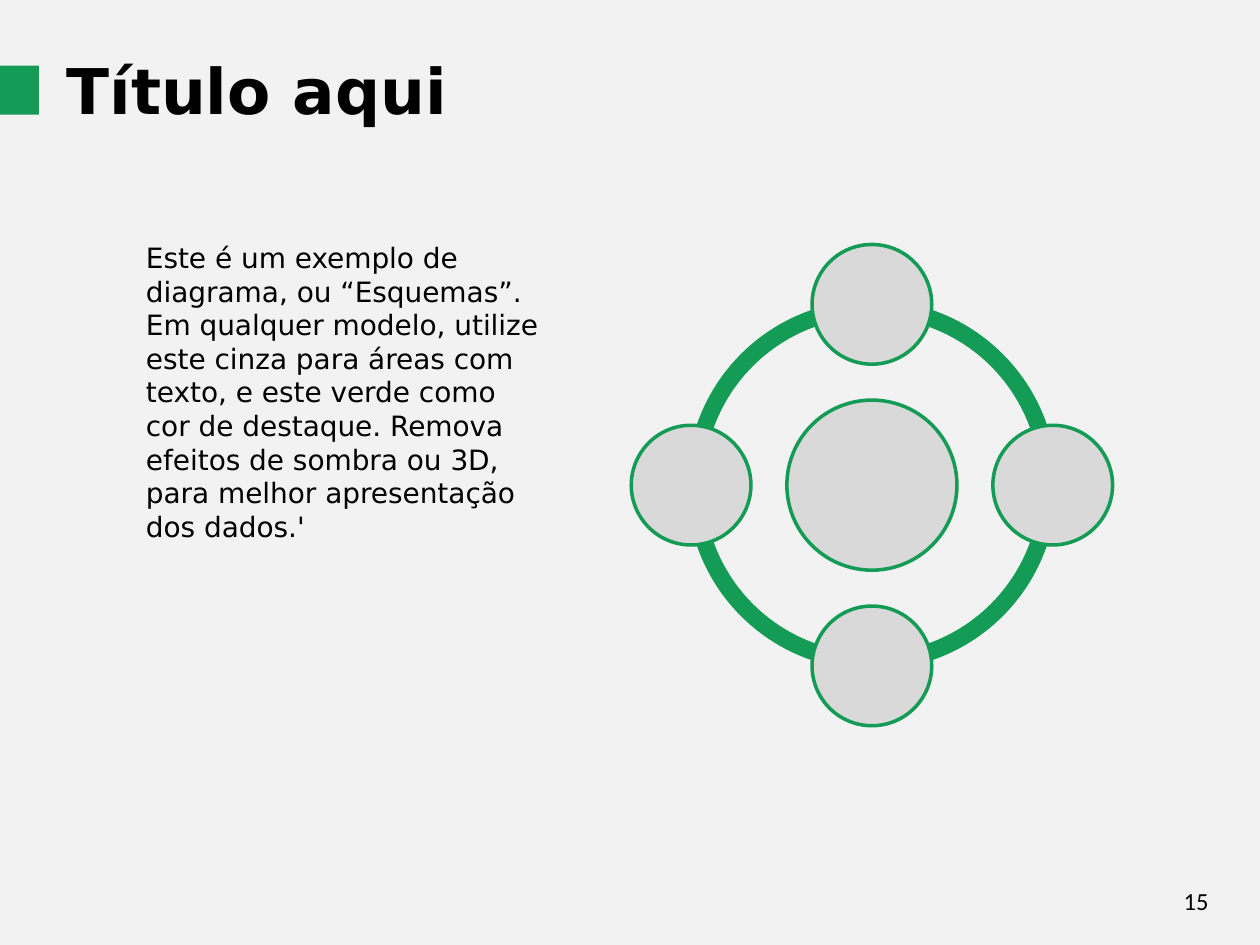
from pptx import Presentation
from pptx.dml.color import RGBColor
from pptx.enum.shapes import MSO_SHAPE as Shape
from pptx.enum.text import MSO_ANCHOR as Anchor, PP_ALIGN as Align
from pptx.util import Inches, Pt

GREEN, GRAY, BACKGROUND, BLACK = "149B55", "D9D9D9", "F2F2F2", "000000"


def add_filled(kind, left, top, width, height, fill, outline=None):
    shape = slide.shapes.add_shape(
        kind, Inches(left), Inches(top), Inches(width), Inches(height))
    shape.shadow.inherit = False
    shape.fill.solid()
    shape.fill.fore_color.rgb = RGBColor.from_string(fill)
    if outline:
        shape.line.color.rgb = RGBColor.from_string(outline)
        shape.line.width = Pt(2)
    else:
        shape.line.fill.background()
    return shape


def add_text(text, left, top, width, height, size, font="DejaVu Sans",
             bold=False, align=Align.LEFT, anchor=Anchor.TOP):
    box = slide.shapes.add_textbox(
        Inches(left), Inches(top), Inches(width), Inches(height))
    frame = box.text_frame
    frame.word_wrap = True
    frame.vertical_anchor = anchor
    paragraph = frame.paragraphs[0]
    paragraph.alignment = align
    run = paragraph.add_run()
    run.text = text
    run.font.name = font
    run.font.size = Pt(size)
    run.font.bold = bold
    run.font.color.rgb = RGBColor.from_string(BLACK)


presentation = Presentation()
presentation.slide_width = Inches(10)
presentation.slide_height = Inches(7.5)
slide = presentation.slides.add_slide(presentation.slide_layouts[6])
slide.background.fill.solid()
slide.background.fill.fore_color.rgb = RGBColor.from_string(BACKGROUND)

# Ring of four quarter arcs; a full turn is 216 adjustment units
center_x, center_y = 6.92, 3.85
ring_size, quarter = 2.94, 54
for step in range(4):
    arc = add_filled(Shape.BLOCK_ARC, center_x - ring_size / 2,
                     center_y - ring_size / 2, ring_size, ring_size, GREEN)
    arc.adjustments[0] = step * quarter
    arc.adjustments[1] = (step + 1) % 4 * quarter
    arc.adjustments[2] = 0.046

# Central circle and four satellites: middle, top, right, bottom, left
orbit = 1.435
circles = [(0, 0, 1.35), (0, -1, 0.95), (1, 0, 0.95), (0, 1, 0.95), (-1, 0, 0.95)]
for across, down, size in circles:
    add_filled(Shape.OVAL, center_x + across * orbit - size / 2,
               center_y + down * orbit - size / 2, size, size, GRAY, GREEN)

# Body text
add_text("Este é um exemplo de diagrama, ou “Esquemas”. Em qualquer modelo, "
         "utilize este cinza para áreas com texto, e este verde como cor de "
         "destaque. Remova efeitos de sombra ou 3D, para melhor apresentação "
         "dos dados.'", 1.06, 1.86, 3.39, 2.52, 16)

# Title with its green marker
add_text("Título aqui", 0.43, 0.36, 6.77, 0.71, 36, bold=True)
add_filled(Shape.RECTANGLE, 0, 0.52, 0.31, 0.39, GREEN)

# Page number
add_text("15", 7.17, 6.95, 2.52, 0.4, 14, font="Calibri",
         align=Align.RIGHT, anchor=Anchor.MIDDLE)

presentation.save("out.pptx")
